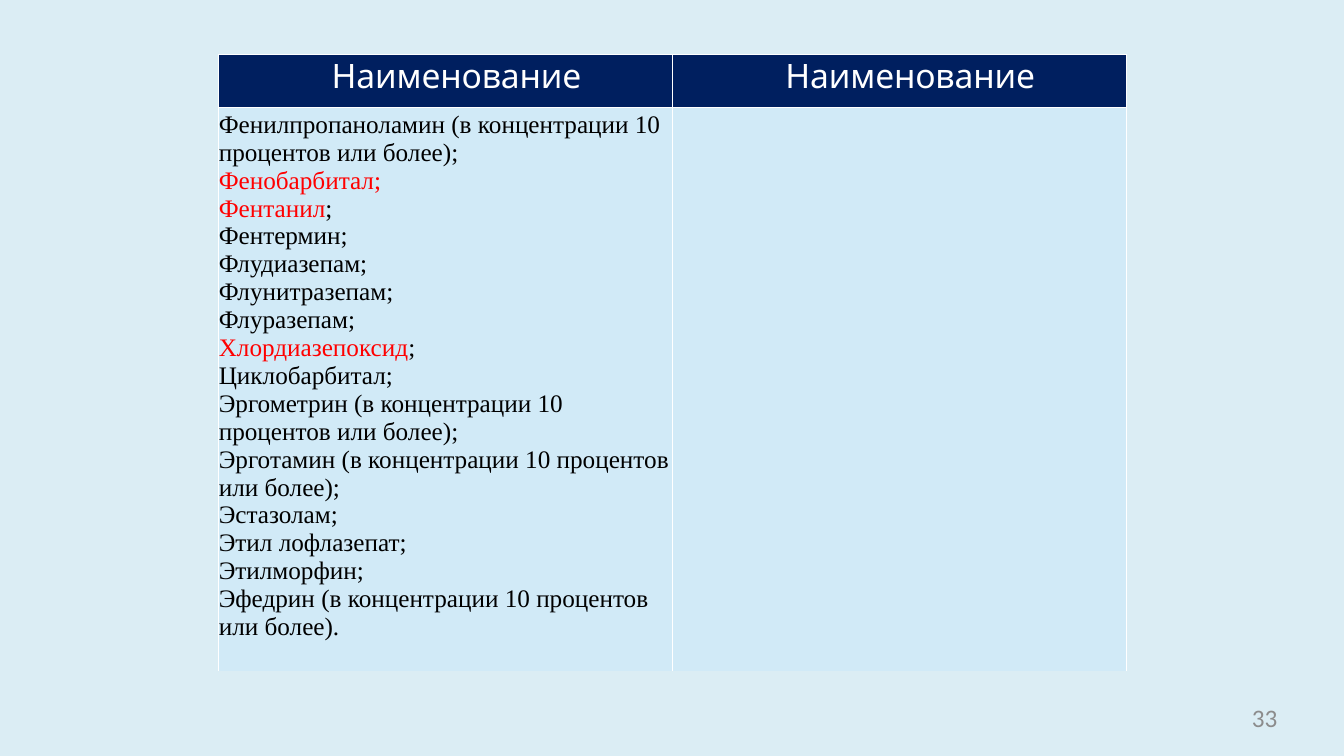
from lxml.etree import SubElement
from pptx import Presentation
from pptx.dml.color import RGBColor
from pptx.enum.text import MSO_ANCHOR, PP_ALIGN
from pptx.oxml.ns import qn
from pptx.util import Inches, Pt

COLORS = {"page": "DBEDF4", "header": "001F5F", "body": "D1EAF7", "white": "FFFFFF",
          "text": "000000", "alert": "FF0000", "number": "8C8C8C"}
HEADERS = ["Наименование", "Наименование"]
# Each substance is a list of (text, colour) parts.
SUBSTANCES = [
    [("Фенилпропаноламин (в концентрации 10 процентов или более);", "text")],
    [("Фенобарбитал;", "alert")],
    [("Фентанил", "alert"), (";", "text")],
    [("Фентермин;", "text")],
    [("Флудиазепам;", "text")],
    [("Флунитразепам;", "text")],
    [("Флуразепам;", "text")],
    [("Хлордиазепоксид", "alert"), (";", "text")],
    [("Циклобарбитал;", "text")],
    [("Эргометрин (в концентрации 10 процентов или более);", "text")],
    [("Эрготамин (в концентрации 10 процентов или более);", "text")],
    [("Эстазолам;", "text")],
    [("Этил лофлазепат;", "text")],
    [("Этилморфин;", "text")],
    [("Эфедрин (в концентрации 10 процентов или более).", "text")],
]
PAGE_NUMBER = "33"
FONTS = {
    "header": {"name": "Karla", "size": Pt(24), "bold": False},
    "body": {"name": "Times New Roman", "size": Pt(18), "bold": False},
    "number": {"name": "Calibri", "size": Pt(18)},
}
INSETS = {"margin_left": 0, "margin_top": Inches(0.03), "margin_right": 0, "margin_bottom": 0}
NO_INSETS = dict.fromkeys(INSETS, 0)
COLUMN_WIDTH = 4.5
ROW_HEIGHTS = [0.53, 5.59]


def rgb(color):
    return RGBColor.from_string(COLORS[color])


def apply(target, values):
    for attribute, value in values.items():
        setattr(target, attribute, value)


def add_run(paragraph, text, style, color):
    run = paragraph.add_run()
    run.text = text
    apply(run.font, FONTS[style])
    run.font.color.rgb = rgb(color)
    return run


def format_cell(cell, fill, sides):
    """Set insets and fill, with a white border on the given sides only."""
    apply(cell, INSETS)
    cell.vertical_anchor = MSO_ANCHOR.TOP
    properties = cell._tc.get_or_add_tcPr()
    for side in "LRTB":
        line = SubElement(properties, qn(f"a:ln{side}"), w=str(Pt(1)))
        if side in sides:
            paint = SubElement(line, qn("a:solidFill"))
            SubElement(paint, qn("a:srgbClr"), val=COLORS["white"])
        else:
            SubElement(line, qn("a:noFill"))
    cell.fill.solid()
    cell.fill.fore_color.rgb = rgb(fill)


def add_substance_table(slide):
    table = slide.shapes.add_table(
        len(ROW_HEIGHTS), len(HEADERS), Inches(2.17), Inches(0.54),
        Inches(COLUMN_WIDTH * len(HEADERS)), Inches(sum(ROW_HEIGHTS))).table
    apply(table, {"first_row": False, "horz_banding": False})
    for column in table.columns:
        column.width = Inches(COLUMN_WIDTH)
    for row, height in zip(table.rows, ROW_HEIGHTS):
        row.height = Inches(height)

    for index, header in enumerate(HEADERS):
        heading = table.cell(0, index)
        format_cell(heading, "header", "LRTB")
        paragraph = heading.text_frame.paragraphs[0]
        paragraph.space_before = Pt(2.1)
        paragraph._p.get_or_add_pPr().set("marL", str(Inches(1.12)))
        run = add_run(paragraph, header, "header", "white")
        run.font._element.set("spc", "-10")
        format_cell(table.cell(1, index), "body", "LRT")

    frame = table.cell(1, 0).text_frame
    for index, parts in enumerate(SUBSTANCES):
        paragraph = frame.add_paragraph() if index else frame.paragraphs[0]
        for text, color in parts:
            add_run(paragraph, text, "body", color)


def add_page_number(slide):
    box = slide.shapes.add_textbox(Inches(9.6), Inches(6.97), Inches(3.07), Inches(0.38))
    frame = box.text_frame
    apply(frame, {**NO_INSETS, "word_wrap": True})
    paragraph = frame.paragraphs[0]
    paragraph.alignment = PP_ALIGN.RIGHT
    add_run(paragraph, PAGE_NUMBER, "number", "number")


def main():
    deck = Presentation()
    apply(deck, {"slide_width": Inches(13.33), "slide_height": Inches(7.5)})
    slide = deck.slides.add_slide(deck.slide_layouts[6])
    slide.background.fill.solid()
    slide.background.fill.fore_color.rgb = rgb("page")
    add_substance_table(slide)
    add_page_number(slide)
    deck.save("out.pptx")


if __name__ == "__main__":
    main()
